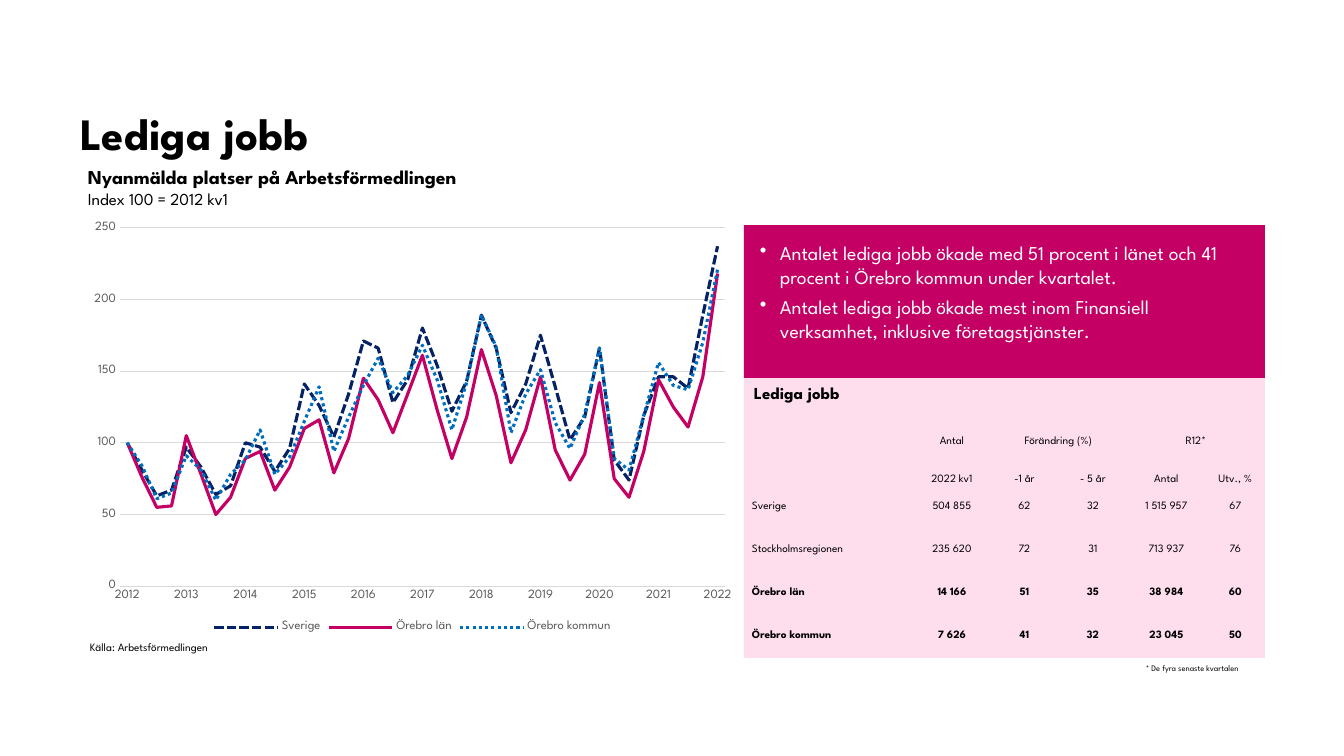
import pptx
import pptx.chart.data
import pptx.dml.color
import pptx.enum.chart
import pptx.enum.dml
import pptx.enum.shapes
import pptx.enum.text
import pptx.oxml
import pptx.oxml.ns
import pptx.util

PX = 914400 / 100.8
FONT = "League Spartan"
BLACK, WHITE, GREY, GRID = "000000", "FFFFFF", "595959", "D9D9D9"
NAVY, CERISE, BLUE, PINK = "052364", "C40064", "006EBF", "FEDEED"
NO_GRID_STYLE = "{2D5ABB26-0587-4C30-8999-92F81FD0307C}"

ALIGN = pptx.enum.text.PP_ALIGN
ANCHOR = pptx.enum.text.MSO_ANCHOR
DASH = pptx.enum.dml.MSO_LINE

SERIES = [
    ("Sverige", NAVY, DASH.SQUARE_DOT,
     [100, 81, 63, 67, 97, 83, 64, 70, 100, 97, 80, 96, 141, 126, 104, 134,
      171, 166, 128, 144, 180, 154, 122, 143, 189, 166, 121, 141, 175, 139,
      102, 118, 166, 88, 74, 119, 146, 146, 138, 189, 237]),
    ("Örebro län", CERISE, DASH.SOLID,
     [100, 76, 55, 56, 105, 78, 50, 62, 89, 94, 67, 83, 110, 116, 79, 103,
      145, 130, 107, 134, 161, 123, 89, 118, 165, 133, 86, 109, 146, 95,
      74, 92, 142, 75, 62, 94, 144, 125, 111, 146, 218]),
    ("Örebro kommun", BLUE, DASH.ROUND_DOT,
     [100, 84, 61, 65, 91, 81, 60, 78, 88, 109, 78, 90, 115, 139, 94, 118,
      140, 159, 135, 147, 168, 144, 109, 142, 189, 167, 107, 134, 151, 114,
      96, 120, 166, 89, 81, 119, 156, 140, 137, 170, 221]),
]
COLUMNS = [170, 76, 69, 68, 79, 59]
ROWS = [36, 38, 43, 43, 43, 43]
JOBS = [
    ["", "Antal", "Förändring (%)", "", "R12*", ""],
    ["", "2022 kv1", "-1 år", "- 5 år", "Antal", "Utv., %"],
    ["Sverige", "504 855", "62", "32", "1 515 957", "67"],
    ["Stockholmsregionen", "235 620", "72", "31", "713 937", "76"],
    ["Örebro län", "14 166", "51", "35", "38 984", "60"],
    ["Örebro kommun", "7 626", "41", "32", "23 045", "50"],
]


def px(length):
    return pptx.util.Emu(round(length * PX))


def color(value):
    return pptx.dml.color.RGBColor.from_string(value)


def set_font(font, size, ink=BLACK, bold=False):
    font.name = FONT
    font.size = pptx.util.Pt(size)
    font.bold = bold
    font.color.rgb = color(ink)


def set_margins(target, left, top, right, bottom):
    target.margin_left, target.margin_top = px(left), px(top)
    target.margin_right, target.margin_bottom = px(right), px(bottom)


def write(para, text, size, ink=BLACK, bold=False, align=ALIGN.LEFT):
    para.alignment = align
    span = para.add_run()
    span.text = text
    set_font(span.font, size, ink, bold)


def add_label(page, left, top, width, height, *lines):
    """Each line is a tuple of text, size and bold."""
    box = page.shapes.add_textbox(px(left), px(top), px(width), px(height))
    frame = box.text_frame
    frame.word_wrap = False
    for index, (text, size, bold) in enumerate(lines):
        para = frame.add_paragraph() if index else frame.paragraphs[0]
        write(para, text, size, bold=bold)


def add_panel(page, left, top, width, height, fill):
    panel = page.shapes.add_shape(pptx.enum.shapes.MSO_SHAPE.RECTANGLE,
                                  px(left), px(top), px(width), px(height))
    panel.shadow.inherit = False
    panel.fill.solid()
    panel.fill.fore_color.rgb = color(fill)
    panel.line.fill.background()
    return panel


def add_bullets(panel, items):
    frame = panel.text_frame
    frame.word_wrap = True
    frame.vertical_anchor = ANCHOR.TOP
    set_margins(frame, 16, 16, 16, 16)
    for index, item in enumerate(items):
        para = frame.add_paragraph() if index else frame.paragraphs[0]
        properties = para._p.get_or_add_pPr()
        properties.set("marL", str(px(20)))
        properties.set("indent", str(px(-20)))
        bullet = pptx.oxml.parse_xml(
            f'<a:buChar {pptx.oxml.ns.nsdecls("a")} char="•"/>')
        properties.append(bullet)
        if index:
            para.space_before = pptx.util.Pt(5)
        write(para, item, 14, WHITE)


def add_job_table(page, left, top):
    frame = page.shapes.add_table(len(ROWS), len(COLUMNS), px(left), px(top),
                                  px(sum(COLUMNS)), px(sum(ROWS)))
    table = frame.table
    table.first_row = table.horz_banding = False
    table._tbl.tblPr.find(pptx.oxml.ns.qn("a:tableStyleId")).text = NO_GRID_STYLE
    for column, width in zip(table.columns, COLUMNS):
        column.width = px(width)
    for row, height in zip(table.rows, ROWS):
        row.height = px(height)
    for first in (2, 4):
        table.cell(0, first).merge(table.cell(0, first + 1))
    for row, values in enumerate(JOBS):
        for column, text in enumerate(values):
            cell = table.cell(row, column)
            cell.fill.background()
            cell.vertical_anchor = ANCHOR.BOTTOM if row < 2 else ANCHOR.MIDDLE
            set_margins(cell, 1 if column else 8, 1, 1, 0)
            if text:
                write(cell.text_frame.paragraphs[0], text, 8, bold=row > 3,
                      align=ALIGN.CENTER if column else ALIGN.LEFT)


def add_job_chart(page, left, top, width, height):
    data = pptx.chart.data.CategoryChartData()
    data.categories = ["" if quarter % 4 else str(2012 + quarter // 4)
                       for quarter in range(41)]
    for name, _, _, values in SERIES:
        data.add_series(name, values)
    chart = page.shapes.add_chart(pptx.enum.chart.XL_CHART_TYPE.LINE, px(left),
                                  px(top), px(width), px(height), data).chart
    set_font(chart.font, 10)
    chart.has_title = False
    chart.has_legend = True
    chart.legend.position = pptx.enum.chart.XL_LEGEND_POSITION.BOTTOM
    chart.legend.include_in_layout = False
    set_font(chart.legend.font, 9, GREY)

    # Lines
    chart.plots[0].vary_by_categories = False
    for series, (_, ink, dash, _) in zip(chart.plots[0].series, SERIES):
        series.smooth = False
        series.marker.style = pptx.enum.chart.XL_MARKER_STYLE.NONE
        series.format.line.width = pptx.util.Pt(2.25)
        series.format.line.color.rgb = color(ink)
        series.format.line.dash_style = dash

    # Axes
    years, index = chart.category_axis, chart.value_axis
    for axis in (years, index):
        axis.major_tick_mark = pptx.enum.chart.XL_TICK_MARK.NONE
        axis.minor_tick_mark = pptx.enum.chart.XL_TICK_MARK.NONE
        set_font(axis.tick_labels.font, 9, GREY)
    index.minimum_scale, index.maximum_scale, index.major_unit = 0, 250, 50
    index.format.line.fill.background()
    for line in (years.format.line, index.major_gridlines.format.line):
        line.color.rgb = color(GRID)
        line.width = pptx.util.Pt(0.75)
    names = pptx.oxml.ns.nsdecls("c")
    years._element.find(pptx.oxml.ns.qn("c:noMultiLvlLbl")).addprevious(
        pptx.oxml.parse_xml(f'<c:tickLblSkip {names} val="1"/>'))

    # Plot area position, as shares of the chart
    places = "".join(f'<c:{tag} val="{value}"/>' for tag, value in (
        ("layoutTarget", "inner"), ("xMode", "edge"), ("yMode", "edge"),
        ("x", 0.06), ("y", 0.03), ("w", 0.91), ("h", 0.85)))
    area = chart._chartSpace.chart.plotArea
    for layout in area.findall(pptx.oxml.ns.qn("c:layout")):
        area.remove(layout)
    area.insert(0, pptx.oxml.parse_xml(
        f"<c:layout {names}><c:manualLayout>{places}</c:manualLayout></c:layout>"))


def add_title(page, text):
    title = page.shapes.title
    title.left, title.top, title.width, title.height = map(px, (80, 37, 929, 123))
    set_margins(title.text_frame, 0, 0, 0, 0)
    title.text_frame.vertical_anchor = ANCHOR.BOTTOM
    write(title.text_frame.paragraphs[0], text, 32, bold=True)


def main():
    deck = pptx.Presentation()
    deck.slide_width, deck.slide_height = px(1344), px(756)
    page = deck.slides.add_slide(deck.slide_layouts[5])

    # Heading and chart
    add_title(page, "Lediga jobb")
    add_label(page, 78, 160, 430, 54,
              ("Nyanmälda platser på Arbetsförmedlingen", 14, True),
              ("Index 100 = 2012 kv1", 12, False))
    add_job_chart(page, 80, 215, 665, 422)
    add_label(page, 80, 635, 165, 24, ("Källa: Arbetsförmedlingen", 8, False))

    # Summary and table
    add_panel(page, 744, 378, 521, 280, PINK)
    summary = add_panel(page, 744, 225, 521, 153, CERISE)
    add_bullets(summary, [
        "Antalet lediga jobb ökade med 51 procent i länet och 41 procent "
        "i Örebro kommun under kvartalet.",
        "Antalet lediga jobb ökade mest inom Finansiell verksamhet, "
        "inklusive företagstjänster.",
    ])
    add_label(page, 744, 378, 118, 30, ("Lediga jobb", 12, True))
    add_job_table(page, 744, 411)
    add_label(page, 1136, 658, 130, 20, ("* De fyra senaste kvartalen", 6, False))

    deck.save("out.pptx")


if __name__ == "__main__":
    main()
